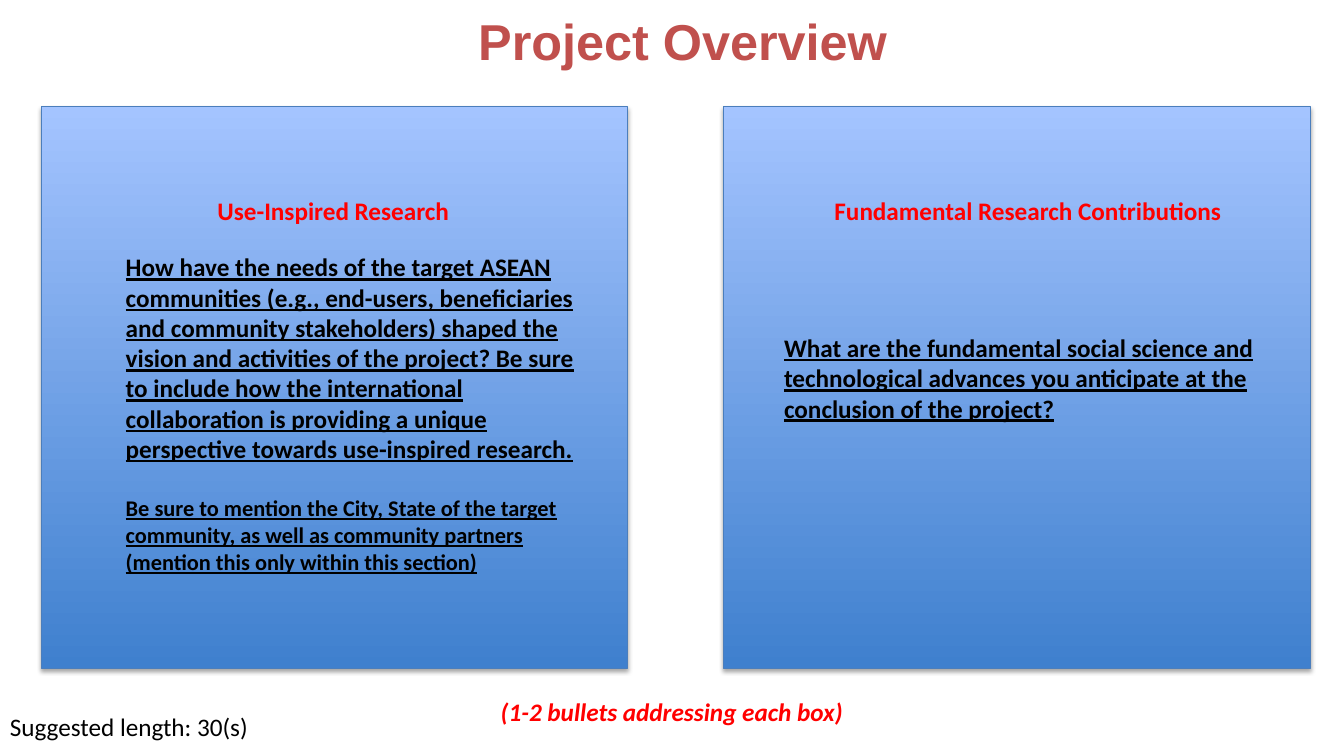
from collections import namedtuple

from lxml.etree import SubElement
from pptx import Presentation
from pptx.dml.color import RGBColor
from pptx.enum.shapes import MSO_SHAPE as Shape
from pptx.enum.text import MSO_ANCHOR as Anchor, MSO_AUTO_SIZE as AutoSize, PP_ALIGN as Align
from pptx.oxml.ns import qn
from pptx.util import Cm, Pt

COLORS = {"panel_dark": "3F80CE", "panel_light": "A4C4FF", "panel_line": "4B7EBC",
          "shadow": "000000", "text": "000000", "accent": "FF0000",
          "title": "C0504D", "paper": "FFFFFF"}
INDENT = Cm(1.27)
PARA_GAP = Pt(22)

TITLE = {"name": "Arial", "size": Pt(36), "bold": True}
HEADING = {"name": "Calibri", "size": Pt(18), "bold": True}
QUESTION = {**HEADING, "underline": True}
DETAIL = {**QUESTION, "size": Pt(16)}
HINT = {**HEADING, "italic": True}
PLAIN = {"name": "Calibri", "size": Pt(18)}

# All measures are in centimetres.
Box = namedtuple("Box", "left top width height")

PANELS = [
    {"box": Box(18.24, 2.69, 14.78, 14.15),
     "heading": "Fundamental Research Contributions",
     "heading_box": Box(2.54, 2.11, 10.26, 1.02),
     "body_box": Box(0, 5.56, 14.55, 2.57),
     "body": [("What are the fundamental social science and technological advances "
               "you anticipate at the conclusion of the project?", QUESTION)]},
    {"box": Box(1.04, 2.69, 14.78, 14.15),
     "heading": "Use-Inspired Research",
     "heading_box": Box(4.19, 2.11, 6.38, 1.02),
     "body_box": Box(0.61, 3.53, 13.54, 8.46),
     "body": [("How have the needs of the target ASEAN communities (e.g., end-users, "
               "beneficiaries and community stakeholders) shaped the vision and "
               "activities of the project? Be sure to include how the international "
               "collaboration is providing a unique perspective towards use-inspired "
               "research.", QUESTION),
              ("Be sure to mention the City, State of the target community, as well as "
               "community partners (mention this only within this section)", DETAIL)]},
]


def rgb(name):
    return RGBColor.from_string(COLORS[name])


def lengths(box):
    return [Cm(value) for value in box]


def inside(outer, inner):
    """Move a box given relative to another one to its place on the page."""
    return inner._replace(left=outer.left + inner.left, top=outer.top + inner.top)


def add_text(page, box, parts, color, wrap=True, indent=0, align=Align.LEFT,
             anchor=Anchor.TOP, auto_size=AutoSize.SHAPE_TO_FIT_TEXT):
    """Add a text box with one paragraph for each (text, format) pair."""
    shape = page.shapes.add_textbox(*lengths(box))
    frame = shape.text_frame
    for name, value in {"word_wrap": wrap, "auto_size": auto_size,
                        "vertical_anchor": anchor}.items():
        setattr(frame, name, value)
    for index, (text, style) in enumerate(parts):
        para = frame.add_paragraph() if index else frame.paragraphs[0]
        para.alignment = align
        if index:
            para.space_before = PARA_GAP
        properties = para._p.get_or_add_pPr()
        properties.set("marL", str(indent))
        properties.set("indent", "0")
        span = para.add_run()
        span.text = text
        for name, value in style.items():
            setattr(span.font, name, value)
        span.font.color.rgb = rgb(color)
    return shape


def add_shadow(shape):
    shape.shadow.inherit = False
    effects = shape._element.spPr.find(qn("a:effectLst"))
    shadow = SubElement(effects, qn("a:outerShdw"), blurRad=str(Pt(3.1)),
                        dist=str(Pt(1.8)), dir="5400000", rotWithShape="0")
    color = SubElement(shadow, qn("a:srgbClr"), val=COLORS["shadow"])
    SubElement(color, qn("a:alpha"), val="35000")


def add_panel_back(page, box):
    panel = page.shapes.add_shape(Shape.RECTANGLE, *lengths(box))
    panel.fill.gradient()
    panel.fill.gradient_angle = 90
    for stop, name in zip(panel.fill.gradient_stops, ("panel_dark", "panel_light")):
        stop.color.rgb = rgb(name)
    panel.line.color.rgb = rgb("panel_line")
    panel.line.width = Pt(0.75)
    add_shadow(panel)


def add_panel(page, box, heading, heading_box, body, body_box):
    add_panel_back(page, box)
    add_text(page, inside(box, body_box), body, "text", indent=INDENT)
    add_text(page, inside(box, heading_box), [(heading, HEADING)], "accent", wrap=False)


def add_title(page, box):
    add_text(page, box, [("Project Overview", TITLE)], "title", align=Align.CENTER,
             anchor=Anchor.MIDDLE, auto_size=AutoSize.NONE)


def add_footer(page, box):
    """Add the length note and the hint about bullets at the foot of the page."""
    add_text(page, inside(box, Box(0, 0.38, 6.58, 1.02)),
             [("Suggested length: 30(s)", PLAIN)], "text", wrap=False)
    hint = add_text(page, inside(box, Box(11.1, 0, 10.49, 1.02)),
                    [("(1-2 bullets addressing each box)", HINT)], "accent", indent=INDENT)
    hint.fill.solid()
    hint.fill.fore_color.rgb = rgb("paper")


def main():
    deck = Presentation()
    deck.slide_width, deck.slide_height = Cm(33.87), Cm(19.05)
    page = deck.slides.add_slide(deck.slide_layouts[6])
    for panel in PANELS:
        add_panel(page, **panel)
    add_title(page, Box(3.58, 0.28, 27.25, 1.45))
    add_footer(page, Box(0, 17.42, 33.87, 1.4))
    deck.save("out.pptx")


if __name__ == "__main__":
    main()
